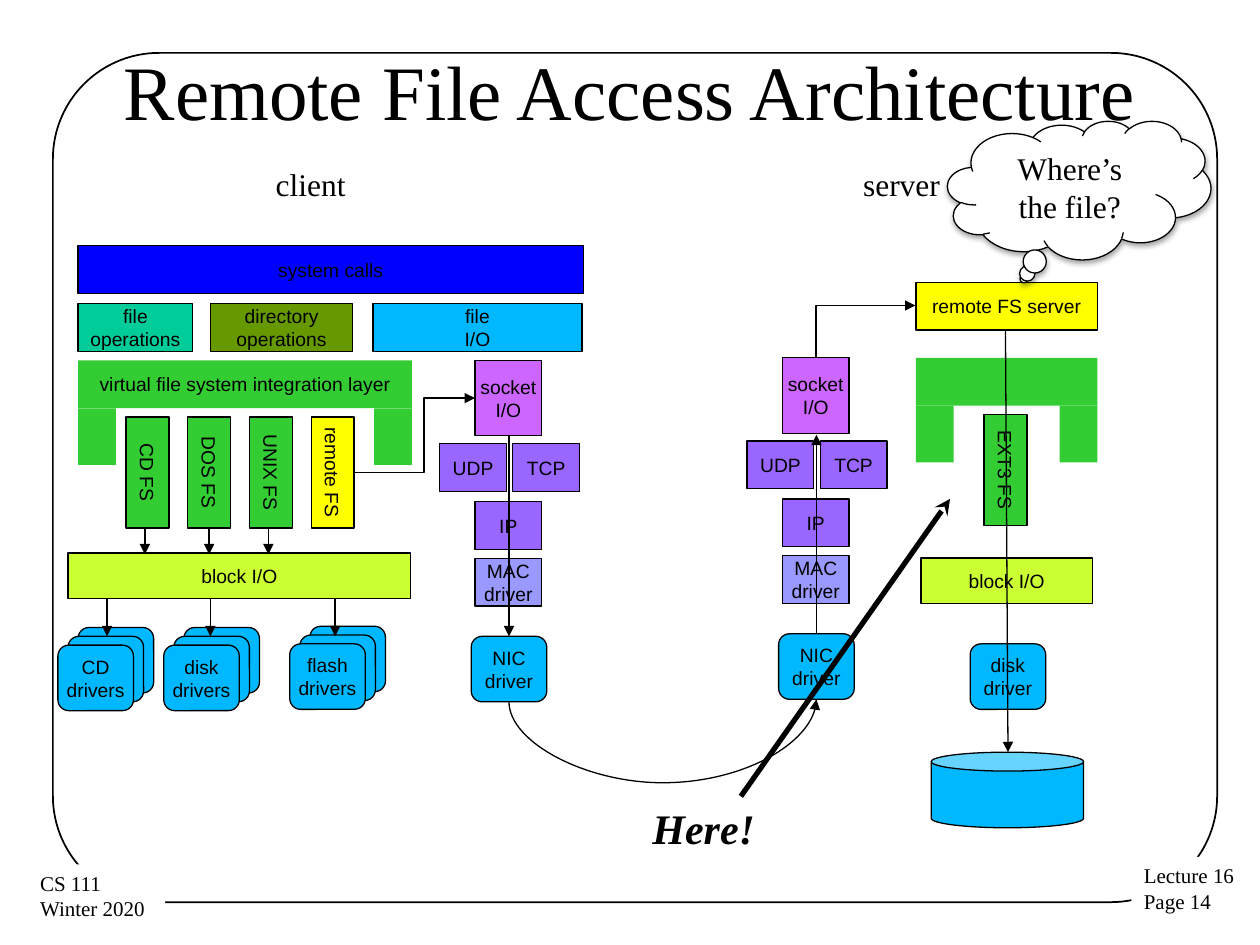
import lxml.etree
import pptx
import pptx.dml.color
import pptx.enum.shapes
import pptx.enum.text
import pptx.oxml.ns
import pptx.util

Inches = pptx.util.Inches
SHAPES = pptx.enum.shapes.MSO_SHAPE
CONNECTORS = pptx.enum.shapes.MSO_CONNECTOR
ALIGN = pptx.enum.text.PP_ALIGN
ANCHOR = pptx.enum.text.MSO_ANCHOR
SERIF = "Times New Roman"
GREEN, BLUE, YELLOW, LIME = "33CC33", "00B8FF", "FFFF00", "CCFF33"
PINK, PURPLE, LILAC = "CC66FF", "9966FF", "9999FF"


def rgb(value):
    """Turn a hex string into a colour."""
    return pptx.dml.color.RGBColor.from_string(value)


def add_node(parent, tag, **attributes):
    """Append a DrawingML element to its parent."""
    node = lxml.etree.SubElement(parent, pptx.oxml.ns.qn(tag))
    for name, value in attributes.items():
        node.set(name, str(value))
    return node


def write(box, text, size=11, font="Arial", align=ALIGN.CENTER, anchor=ANCHOR.MIDDLE,
          wrap=False, inset=0.09, strong=False):
    """Fill a shape with uniformly formatted black text."""
    frame = box.text_frame
    frame.text = text
    frame.word_wrap = wrap
    frame.vertical_anchor = anchor
    frame.margin_left = frame.margin_right = Inches(inset)
    frame.margin_top = frame.margin_bottom = Inches(0.05)
    for para in frame.paragraphs:
        para.alignment = align
        for span in para.runs:
            span.font.size = pptx.util.Pt(size)
            span.font.name = font
            span.font.color.rgb = rgb("000000")
            span.font.bold = span.font.italic = strong


def add_box(page, bounds, fill=None, text="", kind=SHAPES.RECTANGLE, line=0.75):
    """Add a preset shape with an optional fill, outline and label."""
    box = page.shapes.add_shape(kind, *map(Inches, bounds))
    box.shadow.inherit = False
    if fill:
        box.fill.solid()
        box.fill.fore_color.rgb = rgb(fill)
    else:
        box.fill.background()
    if line:
        box.line.color.rgb = rgb("000000")
        box.line.width = pptx.util.Pt(line)
    else:
        box.line.fill.background()
    if text:
        write(box, text)
    return box


def add_label(page, bounds, text, **style):
    """Add a plain text box."""
    write(page.shapes.add_textbox(*map(Inches, bounds)), text, font=SERIF, **style)


def add_arrow(page, start, end, kind=CONNECTORS.STRAIGHT, width=0.75, head="triangle",
              preset=None, rotation=0, bend=None):
    """Add a connector with an arrowhead at its end."""
    arrow = page.shapes.add_connector(kind, *map(Inches, start + end))
    arrow.line.color.rgb = rgb("000000")
    arrow.line.width = pptx.util.Pt(width)
    add_node(arrow.line._get_or_add_ln(), "a:tailEnd", type=head)
    properties = arrow._element.spPr
    add_node(properties, "a:effectLst")
    if rotation:
        properties.find(pptx.oxml.ns.qn("a:xfrm")).set("rot", str(rotation * 60000))
    geometry = properties.find(pptx.oxml.ns.qn("a:prstGeom"))
    if preset:
        geometry.set("prst", preset)
    if bend is not None:
        guides = geometry.find(pptx.oxml.ns.qn("a:avLst"))
        if guides is None:
            guides = add_node(geometry, "a:avLst")
        add_node(guides, "a:gd", name="adj1", fmla=f"val {round(bend * 100000)}")


def add_driver(page, left, top, text=""):
    """Add one rounded driver box."""
    add_box(page, (left, top, 0.6, 0.52), BLUE, text, SHAPES.ROUNDED_RECTANGLE)


def add_driver_stack(page, left, top, text, arrow_x):
    """Add three overlapping driver boxes fed by an arrow from block I/O."""
    for step in (2, 1):
        add_driver(page, left + 0.08 * step, top - 0.07 * step)
    add_driver(page, left, top, text)
    add_arrow(page, (arrow_x, 4.75), (arrow_x, 5.05))


def add_file_system(page, left, fill, text):
    """Add a file system box turned on its side."""
    add_box(page, (left, 3.58 if left < 5 else 3.56, 0.88, 0.34), fill, text).rotation = 90


def add_integration_layer(page, left, top, width, text=""):
    """Add a green bracket made of a bar and two legs."""
    add_box(page, (left, top, width, 0.38), GREEN, text, line=0)
    for leg in (left, left + width - 0.3):
        add_box(page, (leg, top + 0.38, 0.3, 0.45), GREEN, line=0)


def add_network_stack(page, left, top):
    """Add the boxes from socket down to network card."""
    add_box(page, (left, top, 0.53, 0.6), PINK, "socket\nI/O")
    for shift, drop, fill, text in ((-0.28, 0.66, PURPLE, "UDP"), (0.3, 0.66, PURPLE, "TCP"),
                                    (0, 1.12, PURPLE, "IP"), (0, 1.57, LILAC, "MAC\ndriver")):
        add_box(page, (left + shift, top + drop, 0.53, 0.38), fill, text)
    add_driver(page, left - 0.03, top + 2.19, "NIC\ndriver")


def add_frame(page):
    """Add the rounded border, footers, title and column headings."""
    border = add_box(page, (0.42, 0.42, 9.24, 6.74), kind=SHAPES.ROUNDED_RECTANGLE, line=1)
    border.adjustments[0] = 0.125
    for bounds, text in (((8.98, 6.8, 0.93, 0.51), "Lecture 16\nPage 14"),
                         ((0.22, 6.86, 1.09, 0.51), "CS 111\nWinter 2020")):
        footer = add_box(page, bounds, "FFFFFF", line=0)
        write(footer, text, 12, SERIF, ALIGN.LEFT, ANCHOR.TOP, inset=0.1)
    add_label(page, (0.39, 0.3, 9.22, 0.83), "Remote File Access Architecture",
              size=44, wrap=True, inset=0.1)
    for left, text in ((1.52, "client"), (6.21, "server")):
        add_label(page, (left, 1.26, 1.89, 0.39), text, size=18, anchor=ANCHOR.TOP, wrap=True)


def add_client(page):
    """Add the client side of the architecture."""
    add_box(page, (0.62, 1.95, 4.01, 0.38), "0000FF", "system calls")
    for left, width, fill, text in ((0.62, 0.91, "00CC99", "file\noperations"),
                                    (1.67, 1.13, "669900", "directory\noperations"),
                                    (2.96, 1.66, BLUE, "file\nI/O")):
        add_box(page, (left, 2.41, width, 0.38), fill, text)
    add_integration_layer(page, 0.62, 2.86, 2.65, "virtual file system integration layer")
    for index, text in enumerate(("CD FS", "DOS FS", "UNIX FS", "remote FS")):
        add_file_system(page, 0.73 + 0.49 * index, YELLOW if index == 3 else GREEN, text)
    add_box(page, (0.54, 4.39, 2.72, 0.36), LIME, "block I/O")
    for x in (1.15, 1.66, 2.13):
        add_arrow(page, (x, 4.19), (x, 4.4))
    add_driver_stack(page, 0.46, 5.12, "CD\ndrivers", 0.85)
    add_driver_stack(page, 1.3, 5.12, "disk\ndrivers", 1.67)
    add_driver_stack(page, 2.3, 5.11, "flash\ndrivers", 2.66)
    add_network_stack(page, 3.77, 2.86)
    add_arrow(page, (2.81, 3.75), (3.77, 3.16), CONNECTORS.ELBOW, bend=0.58)
    add_arrow(page, (4.04, 3.46), (4.04, 5.05))


def add_server(page):
    """Add the server side of the architecture."""
    add_box(page, (7.31, 4.43, 1.36, 0.36), LIME, "block I/O")
    add_file_system(page, 7.54, GREEN, "EXT3 FS")
    add_integration_layer(page, 7.27, 2.84, 1.44)
    add_driver(page, 7.7, 5.11, "disk\ndriver")
    add_box(page, (7.39, 5.97, 1.21, 0.6), BLUE, kind=SHAPES.CAN)
    add_network_stack(page, 6.21, 2.84)
    add_box(page, (7.27, 2.24, 1.44, 0.38), YELLOW, "remote FS server")
    add_arrow(page, (6.66, 2.24), (7.08, 3.03), CONNECTORS.ELBOW,
              preset="bentConnector2", rotation=270)
    add_arrow(page, (6.48, 5.03), (6.48, 3.45))
    add_arrow(page, (7.98, 2.62), (8, 5.97))


def add_question(page):
    """Add the shadowed thought cloud and the pointer that answers it."""
    cloud = add_box(page, (7.52, 0.96, 2.09, 1.1), "FFFFFF", kind=SHAPES.CLOUD_CALLOUT)
    cloud.adjustments[0], cloud.adjustments[1] = -0.21, 0.64
    write(cloud, "Where’s the file?", 18, SERIF, wrap=True, inset=0.1)
    effects = cloud._element.spPr.find(pptx.oxml.ns.qn("a:effectLst"))
    shadow = add_node(effects, "a:outerShdw", blurRad=pptx.util.Pt(3.1),
                      dist=pptx.util.Pt(1.8), dir=90 * 60000, rotWithShape=0)
    add_node(add_node(shadow, "a:srgbClr", val="000000"), "a:alpha", val=35000)
    add_arrow(page, (5.88, 6.32), (7.54, 3.96), width=3, head="stealth")
    add_label(page, (5.08, 6.32, 1.02, 0.5), "Here!", size=24, align=ALIGN.LEFT,
              anchor=ANCHOR.TOP, inset=0.1, strong=True)


def main():
    """Build the slide and save it."""
    deck = pptx.Presentation()
    deck.slide_width, deck.slide_height = Inches(10), Inches(7.5)
    page = deck.slides.add_slide(deck.slide_layouts[6])
    add_frame(page)
    add_client(page)
    add_server(page)
    add_arrow(page, (5.27, 6.78), (5.25, 4.34), CONNECTORS.CURVE, rotation=90, bend=-32)
    add_question(page)
    deck.save("out.pptx")


if __name__ == "__main__":
    main()
